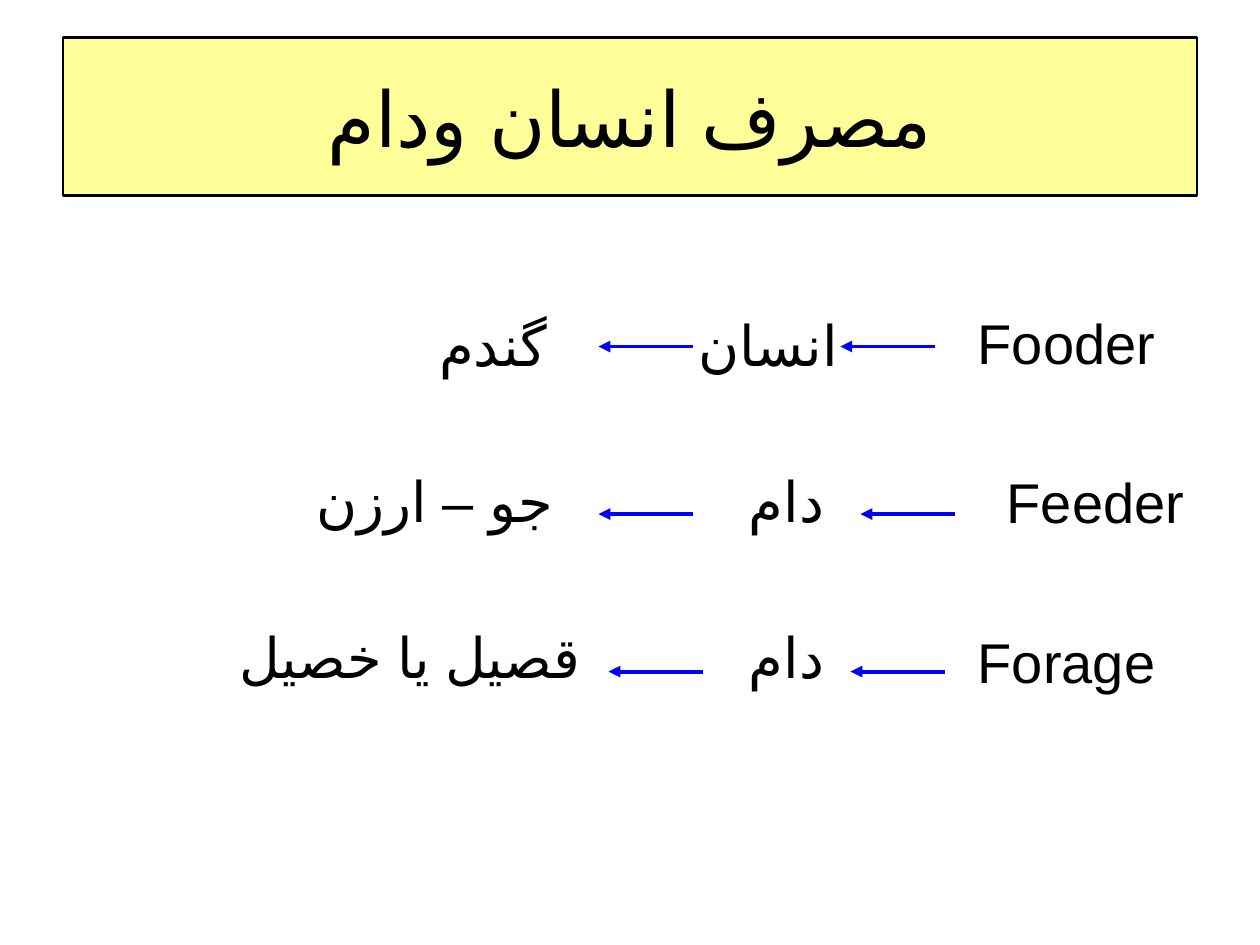
from lxml.etree import SubElement
from pptx import Presentation
from pptx.dml.color import RGBColor
from pptx.enum.lang import MSO_LANGUAGE_ID
from pptx.enum.shapes import MSO_CONNECTOR
from pptx.enum.text import MSO_ANCHOR, MSO_AUTO_SIZE, PP_ALIGN
from pptx.oxml.ns import qn
from pptx.util import Inches, Pt

FONT = "Arial"
FARSI = MSO_LANGUAGE_ID.FARSI
ARROW_LENGTH = 0.75
ROW_TOP, ROW_PITCH, ROW_HEIGHT = 2.43, 1.24, 0.6
# Term, its indent, (word, right edge) pairs, arrow height, arrow start points
ROWS = [
    ("Fooder", 0.23, (("انسان", 6.65), ("گندم", 4.34)), 2.75, (7.42, 5.5)),
    ("Feeder", 0, (("دام", 6.54), ("جو – ارزن", 4.39)), 4.08, (7.58, 5.5)),
    ("Forage", 0.23, (("دام", 6.54), ("قصیل یا خصیل", 4.61)), 5.33, (7.5, 5.58)),
]


def color(value):
    return RGBColor.from_string(value)


def place(sp, left, top, width, height):
    sp.left, sp.top = Inches(left), Inches(top)
    sp.width, sp.height = Inches(width), Inches(height)


def add_run(p, text, size, language=MSO_LANGUAGE_ID.ENGLISH_US):
    r = p.add_run()
    r.text = text
    r.font.size = Pt(size)
    r.font.color.rgb = color("000000")
    r.font.name = FONT
    r.font.language_id = language
    SubElement(r.font._element, qn("a:cs"), typeface=FONT)


def format_rtl(p, indent=0):
    """Make the paragraph right-to-left, on the right and without bullet."""
    p.alignment = PP_ALIGN.RIGHT
    pPr = p._p.get_or_add_pPr()
    for name, value in (("marL", Inches(indent)), ("indent", 0), ("rtl", 1)):
        pPr.set(name, str(int(value)))
    SubElement(pPr, qn("a:buNone"))


def fill_title(sp, box):
    place(sp, *box)
    sp.fill.solid()
    sp.fill.fore_color.rgb = color("FFFF99")
    sp.line.color.rgb = color("000000")
    sp.line.width = Pt(1.5)
    tf = sp.text_frame
    tf.auto_size = MSO_AUTO_SIZE.NONE
    tf.vertical_anchor = MSO_ANCHOR.MIDDLE
    p = tf.paragraphs[0]
    p.alignment = PP_ALIGN.CENTER
    add_run(p, "مصرف انسان ودام", 44, FARSI)


def fill_terms(sp, box):
    place(sp, *box)
    tf = sp.text_frame
    tf.auto_size = MSO_AUTO_SIZE.NONE
    tf.vertical_anchor = MSO_ANCHOR.TOP
    tf.margin_top = Inches(0.7)
    for i, (term, indent, *_) in enumerate(ROWS):
        p = tf.add_paragraph() if i else tf.paragraphs[0]
        p.space_before = Pt(52.6 if i else 0)
        format_rtl(p, indent)
        add_run(p, term, 32)


def add_word(s, text, right, top, width=3):
    """Add a word that ends at the given right edge."""
    sp = s.shapes.add_textbox(
        Inches(right - width), Inches(top), Inches(width), Inches(ROW_HEIGHT)
    )
    tf = sp.text_frame
    tf.word_wrap = True
    tf.vertical_anchor = MSO_ANCHOR.MIDDLE
    tf.margin_left = tf.margin_right = tf.margin_top = tf.margin_bottom = 0
    p = tf.paragraphs[0]
    format_rtl(p)
    add_run(p, text, 32, FARSI)


def add_arrow(s, x, y):
    """Draw an arrow that starts at x, y and points left."""
    line = s.shapes.add_connector(
        MSO_CONNECTOR.STRAIGHT, Inches(x), Inches(y), Inches(x - ARROW_LENGTH), Inches(y)
    )
    line.line.color.rgb = color("0000FF")
    line.line.width = Pt(2.25)
    SubElement(line.line._get_or_add_ln(), qn("a:tailEnd"), type="triangle")
    SubElement(line._element.spPr, qn("a:effectLst"))


def main():
    prs = Presentation()
    prs.slide_width, prs.slide_height = Inches(10), Inches(7.5)
    s = prs.slides.add_slide(prs.slide_layouts[1])
    fill_title(s.shapes.title, (0.5, 0.3, 9, 1.25))
    fill_terms(s.placeholders[1], (0.5, 1.75, 9, 4.95))
    for i, (_, _, words, y, starts) in enumerate(ROWS):
        for text, right in words:
            add_word(s, text, right, ROW_TOP + i * ROW_PITCH)
        for x in starts:
            add_arrow(s, x, y)
    prs.save("out.pptx")


if __name__ == "__main__":
    main()
